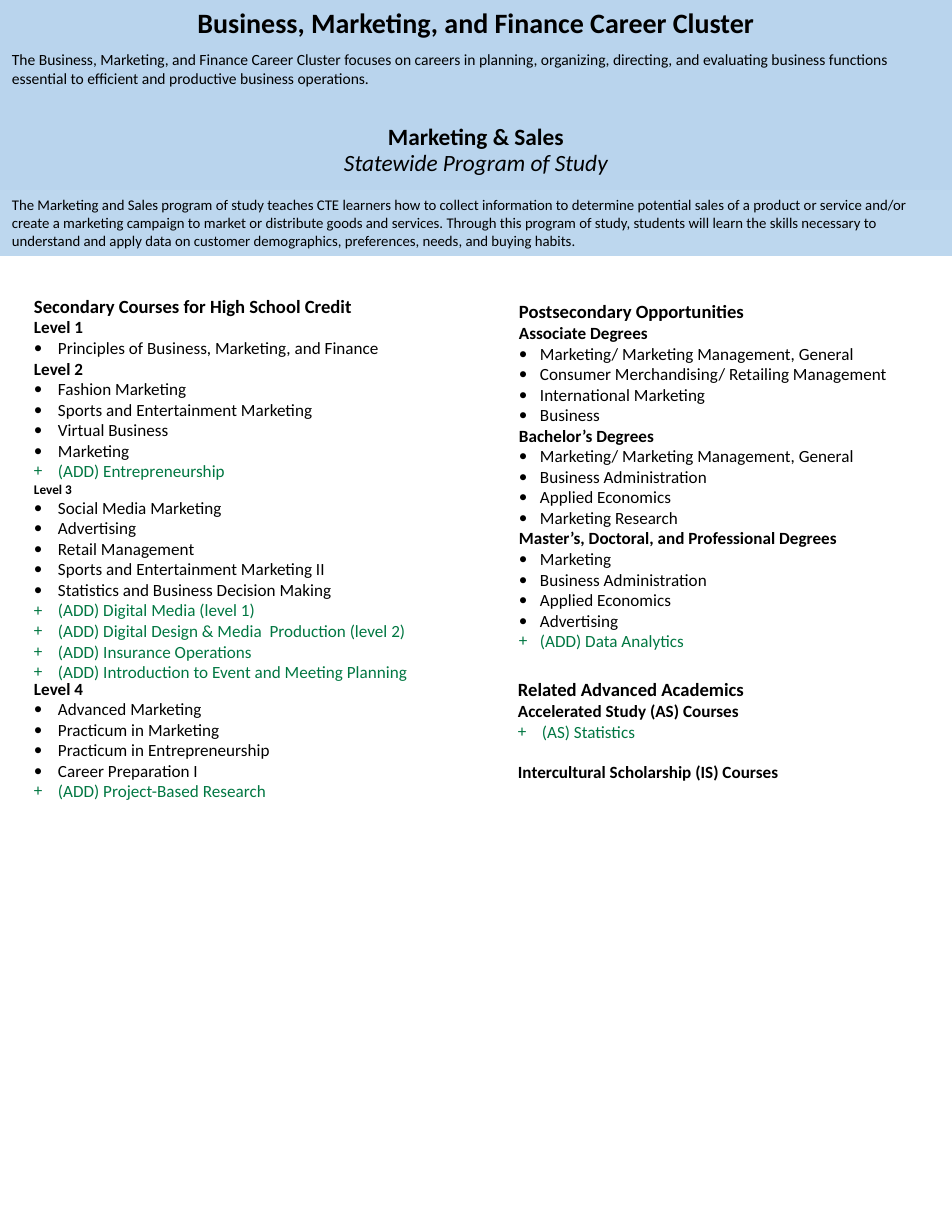
from lxml import etree
from pptx import Presentation
from pptx.dml.color import RGBColor
from pptx.enum.shapes import MSO_SHAPE
from pptx.enum.text import MSO_ANCHOR, PP_ALIGN
from pptx.oxml.ns import qn
from pptx.util import Pt

RECT = MSO_SHAPE.RECTANGLE
TOP, MIDDLE = MSO_ANCHOR.TOP, MSO_ANCHOR.MIDDLE
LEFT, CENTER = PP_ALIGN.LEFT, PP_ALIGN.CENTER

EMU_PER_PX = 914400 / 112
BLACK, GREEN = "000000", "007742"


def px(length):
    return round(length * EMU_PER_PX)


def add_line(frame, text, size, color=BLACK, bold=False, italic=False, align=LEFT):
    """Write one paragraph, using the frame's first one while it is empty."""
    line = frame.paragraphs[0]
    if line.runs:
        line = frame.add_paragraph()
    line.alignment = align
    run = line.add_run()
    run.text = text
    run.font.name = "Calibri"
    run.font.size = Pt(size)
    run.font.bold = bold
    run.font.italic = italic
    run.font.color.rgb = RGBColor.from_string(color)
    return line


prs = Presentation()
prs.slide_width, prs.slide_height = px(952), px(1232)
slide = prs.slides.add_slide(prs.slide_layouts[6])

# Blue bands: top, height, fill, anchor, vertical inset
bands = [
    (112, 78, "B9D4ED", MIDDLE, 6),
    (0, 113, "B9D4ED", TOP, 6),
    (190, 66, "BDD7EE", TOP, 6),
]
band_frames = []
for top, height, fill, anchor, inset in bands:
    band = slide.shapes.add_shape(RECT, 0, px(top), px(952), px(height))
    band.shadow.inherit = False
    band.fill.solid()
    band.fill.fore_color.rgb = RGBColor.from_string(fill)
    band.line.fill.background()
    frame = band.text_frame
    frame.word_wrap = True
    frame.vertical_anchor = anchor
    frame.margin_left = frame.margin_right = px(12)
    frame.margin_top = frame.margin_bottom = px(inset)
    band_frames.append(frame)
program, cluster, summary = band_frames

add_line(program, "Marketing & Sales", 15, bold=True, align=CENTER).line_spacing = 0.9
add_line(program, "Statewide Program of Study", 15, italic=True, align=CENTER).line_spacing = 0.9

cluster_title = add_line(cluster, "Business, Marketing, and Finance Career Cluster", 18,
                         bold=True, align=CENTER)
cluster_title.space_after = Pt(6.6)
add_line(cluster, "The Business, Marketing, and Finance Career Cluster focuses on careers in "
         "planning, organizing, directing, and evaluating business functions essential to "
         "efficient and productive business operations.", 10)

add_line(summary, "The Marketing and Sales program of study teaches CTE learners how to collect "
         "information to determine potential sales of a product or service and/or create a "
         "marketing campaign to market or distribute goods and services. Through this program "
         "of study, students will learn the skills necessary to understand and apply data on "
         "customer demographics, preferences, needs, and buying habits.", 9.5)

# Course lists: group, courses, added courses
secondary = [
    ("Level 1", ["Principles of Business, Marketing, and Finance"], []),
    ("Level 2",
     ["Fashion Marketing", "Sports and Entertainment Marketing", "Virtual Business", "Marketing"],
     ["(ADD) Entrepreneurship"]),
    ("Level 3",
     ["Social Media Marketing", "Advertising", "Retail Management",
      "Sports and Entertainment Marketing II", "Statistics and Business Decision Making"],
     ["(ADD) Digital Media (level 1)", "(ADD) Digital Design & Media  Production (level 2)",
      "(ADD) Insurance Operations", "(ADD) Introduction to Event and Meeting Planning"]),
    ("Level 4",
     ["Advanced Marketing", "Practicum in Marketing", "Practicum in Entrepreneurship",
      "Career Preparation I"],
     ["(ADD) Project-Based Research"]),
]
postsecondary = [
    ("Associate Degrees",
     ["Marketing/ Marketing Management, General", "Consumer Merchandising/ Retailing Management",
      "International Marketing", "Business"], []),
    ("Bachelor’s Degrees",
     ["Marketing/ Marketing Management, General", "Business Administration",
      "Applied Economics", "Marketing Research"], []),
    ("Master’s, Doctoral, and Professional Degrees",
     ["Marketing", "Business Administration", "Applied Economics", "Advertising"],
     ["(ADD) Data Analytics"]),
]
advanced = [
    ("Accelerated Study (AS) Courses", [], ["(AS) Statistics"]),
    ("Intercultural Scholarship (IS) Courses", [], []),
]

# Place (left, top, width, height), side inset, vertical inset, list indent, heading, groups
columns = [
    ((23, 293, 459, 575), 11, 6, 24, "Secondary Courses for High School Credit", secondary),
    ((507, 293, 437, 409), 12, 7, 21, "Postsecondary Opportunities", postsecondary),
    ((507, 672, 445, 170), 11, 6, 24, "Related Advanced Academics", advanced),
]
group_sizes = {"Level 3": 8.5}
tight_lines = {"Secondary Courses for High School Credit", "Level 4"}
spaced_groups = {"Intercultural Scholarship (IS) Courses"}

for place, side, inset, indent, heading, groups in columns:
    frame = slide.shapes.add_textbox(*map(px, place)).text_frame
    frame.word_wrap = True
    frame.margin_left = frame.margin_right = px(side)
    frame.margin_top = frame.margin_bottom = px(inset)
    heading_line = add_line(frame, heading, 12, bold=True)
    if heading in tight_lines:
        heading_line.line_spacing = 0.8

    for group, courses, additions in groups:
        group_line = add_line(frame, group, group_sizes.get(group, 11), bold=True)
        if group in tight_lines:
            group_line.line_spacing = 0.8
        if group in spaced_groups:
            group_line.space_before = Pt(13)

        for mark, color, names in (("•", BLACK, courses), ("+", GREEN, additions)):
            for name in names:
                props = add_line(frame, name, 11, color)._p.get_or_add_pPr()
                props.set("marL", str(px(indent)))
                props.set("indent", str(-px(indent)))
                mark_color = etree.SubElement(props, qn("a:buClr"))
                etree.SubElement(mark_color, qn("a:srgbClr"), val=color)
                etree.SubElement(props, qn("a:buFont"), typeface="Calibri")
                etree.SubElement(props, qn("a:buChar"), char=mark)

prs.save("out.pptx")
